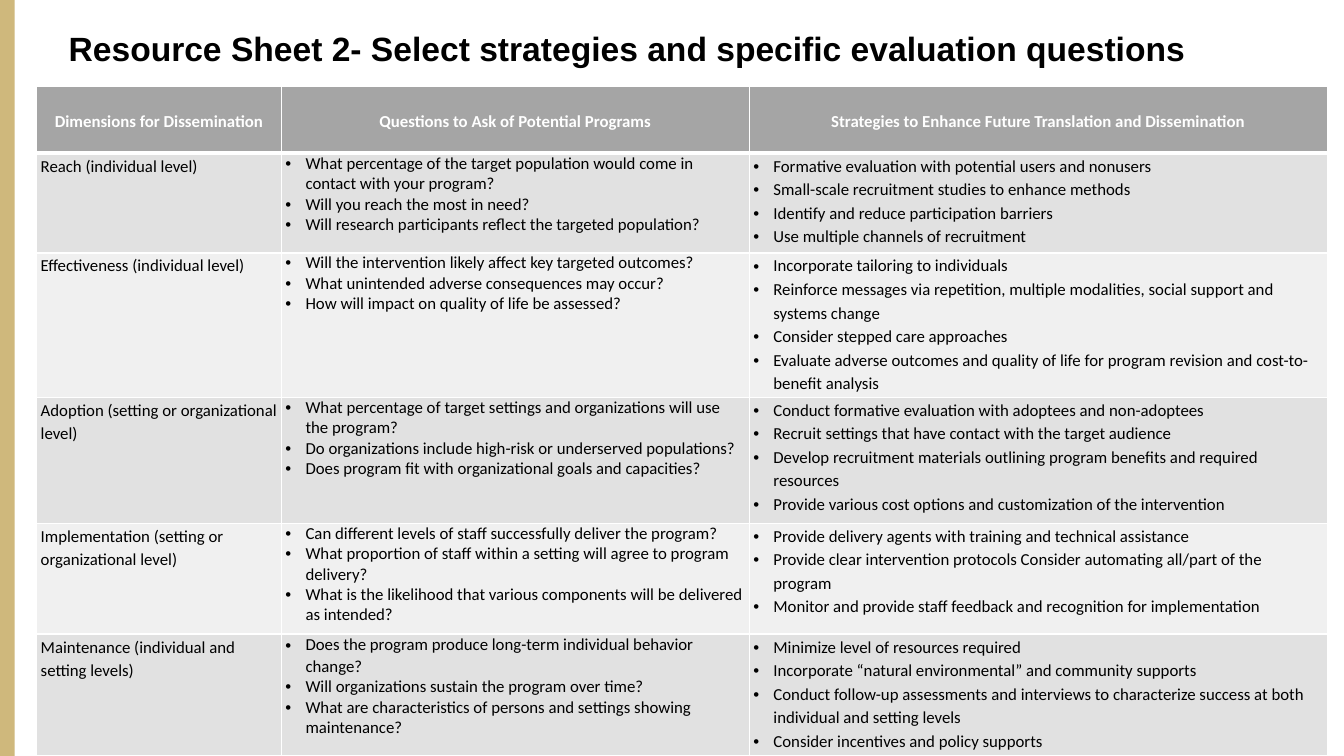
from lxml.etree import SubElement
from pptx import Presentation
from pptx.dml.color import RGBColor
from pptx.enum.shapes import MSO_SHAPE
from pptx.enum.text import MSO_ANCHOR, MSO_AUTO_SIZE, PP_ALIGN
from pptx.oxml.ns import qn
from pptx.util import Pt


def color(hex_value):
    return RGBColor.from_string(hex_value)


def add_xml(parent, tag, **attributes):
    child = SubElement(parent, qn(tag))
    for key, value in attributes.items():
        child.set(key, str(value))
    return child


headings = [
    "Dimensions for Dissemination",
    "Questions to Ask of Potential Programs",
    "Strategies to Enhance Future Translation and Dissemination",
]
dimensions = [
    (
        "Reach (individual level)",
        [
            "What percentage of the target population would come in contact with your program?",
            "Will you reach the most in need?",
            "Will research participants reflect the targeted population?",
        ],
        [
            "Formative evaluation with potential users and nonusers",
            "Small-scale recruitment studies to enhance methods",
            "Identify and reduce participation barriers",
            "Use multiple channels of recruitment",
        ],
    ),
    (
        "Effectiveness (individual level)",
        [
            "Will the intervention likely affect key targeted outcomes?",
            "What unintended adverse consequences may occur?",
            "How will impact on quality of life be assessed?",
        ],
        [
            "Incorporate tailoring to individuals",
            "Reinforce messages via repetition, multiple modalities, social support and systems change",
            "Consider stepped care approaches",
            "Evaluate adverse outcomes and quality of life for program revision and cost-to-benefit analysis",
        ],
    ),
    (
        "Adoption (setting or organizational level)",
        [
            "What percentage of target settings and organizations will use the program?",
            "Do organizations include high-risk or underserved populations?",
            "Does program fit with organizational goals and capacities?",
        ],
        [
            "Conduct formative evaluation with adoptees and non-adoptees",
            "Recruit settings that have contact with the target audience",
            "Develop recruitment materials outlining program benefits and required resources",
            "Provide various cost options and customization of the intervention",
        ],
    ),
    (
        "Implementation (setting or organizational level)",
        [
            "Can different levels of staff successfully deliver the program?",
            "What proportion of staff within a setting will agree to program delivery?",
            "What is the likelihood that various components will be delivered as intended?",
        ],
        [
            "Provide delivery agents with training and technical assistance",
            "Provide clear intervention protocols Consider automating all/part of the program",
            "Monitor and provide staff feedback and recognition for implementation",
        ],
    ),
    (
        "Maintenance (individual and setting levels)",
        [
            "Does the program produce long-term individual behavior change?",
            "Will organizations sustain the program over time?",
            "What are characteristics of persons and settings showing maintenance?",
        ],
        [
            "Minimize level of resources required",
            "Incorporate “natural environmental” and community supports",
            "Conduct follow-up assessments and interviews to characterize success at both individual and setting levels",
            "Consider incentives and policy supports",
        ],
    ),
]
column_widths = [174.8, 334.2, 412.9]
row_heights = [47.5, 71.3, 103, 90, 79.2, 87.1]

deck = Presentation()
deck.slide_width, deck.slide_height = Pt(960), Pt(540)
slide = deck.slides.add_slide(deck.slide_layouts[5])

heading = slide.shapes.title
heading.left, heading.top, heading.width, heading.height = Pt(41.8), Pt(-5.8), Pt(880.6), Pt(84.2)
heading.text_frame.word_wrap = True
heading.text_frame.auto_size = MSO_AUTO_SIZE.NONE
heading.text_frame.vertical_anchor = MSO_ANCHOR.MIDDLE
heading_line = heading.text_frame.paragraphs[0]
heading_line.alignment = PP_ALIGN.LEFT
heading_line.line_spacing = 0.9
heading_run = heading_line.add_run()
heading_run.text = "Resource Sheet 2- Select strategies and specific evaluation questions"
heading_run.font.name = "Arial"
heading_run.font.size = Pt(24)
heading_run.font.bold = True
heading_run.font.color.rgb = color("000000")

side_band = slide.shapes.add_shape(MSO_SHAPE.RECTANGLE, 0, 0, Pt(10.4), Pt(540))
side_band.shadow.inherit = False
side_band.fill.solid()
side_band.fill.fore_color.rgb = color("CFB87C")
side_band.line.fill.background()

strategy_table = slide.shapes.add_table(
    len(row_heights), len(column_widths), Pt(26.2), Pt(61.9), Pt(sum(column_widths)), Pt(sum(row_heights))
).table
for column, width in zip(strategy_table.columns, column_widths):
    column.width = Pt(width)
for row, height in zip(strategy_table.rows, row_heights):
    row.height = Pt(height)

for row_index, entries in enumerate([headings, *dimensions]):
    is_header = row_index == 0
    for column_index, entry in enumerate(entries):
        cell = strategy_table.cell(row_index, column_index)
        cell.margin_left = cell.margin_right = Pt(2.9)
        cell.margin_top = cell.margin_bottom = 0
        cell.vertical_anchor = MSO_ANCHOR.MIDDLE if is_header else MSO_ANCHOR.TOP
        thick_side = {0: "a:lnB", 1: "a:lnT"}.get(row_index)
        for side in ("a:lnL", "a:lnR", "a:lnT", "a:lnB"):
            border = add_xml(cell._tc.get_or_add_tcPr(), side, w=Pt(3 if side == thick_side else 1))
            add_xml(add_xml(border, "a:solidFill"), "a:srgbClr", val="FFFFFF")
        cell.fill.solid()
        cell.fill.fore_color.rgb = color("A5A5A5" if is_header else ("F0F0F0", "E1E1E1")[row_index % 2])

        is_list = isinstance(entry, list)
        for line_index, wording in enumerate(entry if is_list else [entry]):
            frame = cell.text_frame
            line = frame.add_paragraph() if line_index else frame.paragraphs[0]
            line.alignment = PP_ALIGN.CENTER if is_header else PP_ALIGN.LEFT
            line.line_spacing = 1.0 if is_list and column_index == 1 else 1.15
            if (row_index, column_index, line_index) == (5, 1, 0):
                line.line_spacing = 1.05
            if is_list:
                properties = line._p.get_or_add_pPr()
                properties.set("marL", str(Pt(14.4)))
                properties.set("indent", str(Pt(-14.4)))
                add_xml(properties, "a:buFont", typeface="Arial")
                add_xml(properties, "a:buChar", char="•")
            run = line.add_run()
            run.text = wording
            run.font.name = "Calibri"
            run.font.size = Pt(12)
            run.font.bold = is_header
            run.font.color.rgb = color("FFFFFF" if is_header else "000000")

deck.save("out.pptx")
